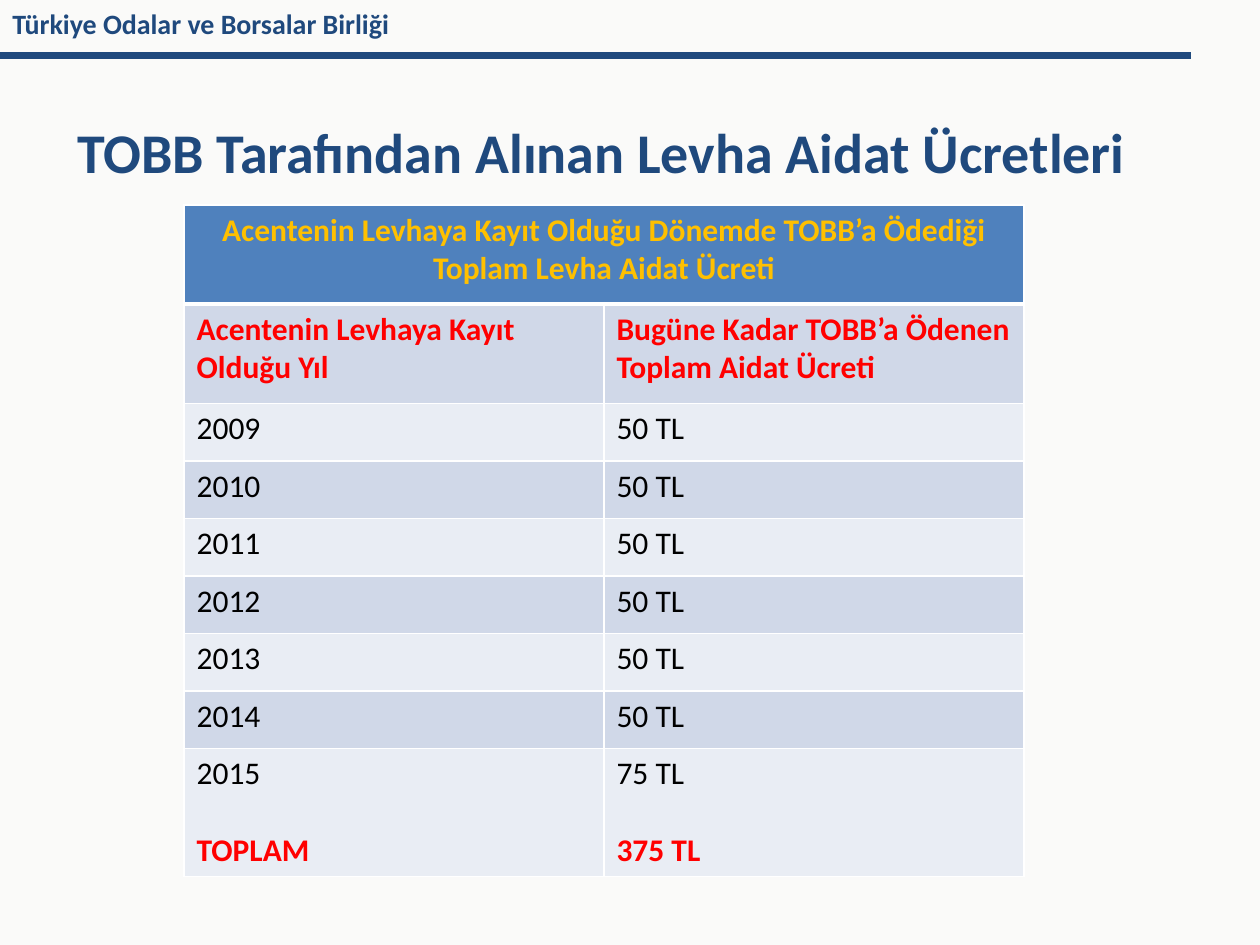
from dataclasses import dataclass

from lxml.etree import SubElement
from pptx import Presentation
from pptx.dml.color import RGBColor as RGB
from pptx.enum.shapes import MSO_CONNECTOR as Connector
from pptx.enum.text import MSO_ANCHOR as Anchor, MSO_AUTO_SIZE as AutoSize, PP_ALIGN as Align
from pptx.oxml import parse_xml
from pptx.oxml.ns import nsdecls, qn
from pptx.util import Cm, Pt


@dataclass(frozen=True)
class Theme:
    """Colours, font and type sizes of the slide."""
    font: str = "Calibri"
    paper: RGB = RGB(0xFA, 0xFA, 0xF9)
    navy: RGB = RGB(0x1F, 0x49, 0x7D)
    heading_fill: RGB = RGB(0x4F, 0x81, 0xBD)
    bands: tuple = (RGB(0xD0, 0xD8, 0xE8), RGB(0xE9, 0xED, 0xF4))
    gold: RGB = RGB(0xFF, 0xC0, 0x00)
    red: RGB = RGB(0xFF, 0x00, 0x00)
    black: RGB = RGB(0x00, 0x00, 0x00)
    title_size: Pt = Pt(32)
    banner_size: Pt = Pt(16)
    table_size: Pt = Pt(18)
    total_gap: Pt = Pt(22)


THEME = Theme()
HEADING = "Acentenin Levhaya Kayıt Olduğu Dönemde TOBB’a Ödediği Toplam Levha Aidat Ücreti"
COLUMNS = ("Acentenin Levhaya Kayıt Olduğu Yıl", "Bugüne Kadar TOBB’a Ödenen Toplam Aidat Ücreti")
FEES = {2009: 50, 2010: 50, 2011: 50, 2012: 50, 2013: 50, 2014: 50, 2015: 75}


def style(paragraph, size, color, bold=True):
    """Format every run of a paragraph."""
    for run in paragraph.runs:
        run.font.name = THEME.font
        run.font.size = size
        run.font.bold = bold
        run.font.color.rgb = color


def add_banner(slide):
    """Add the organisation name and the rule below it."""
    rule = slide.shapes.add_connector(Connector.STRAIGHT, 0, Cm(1.12), Cm(24), Cm(1.12))
    rule.line.color.rgb = THEME.navy
    rule.line.width = Pt(4)
    SubElement(rule._element.spPr, qn("a:effectLst"))
    frame = slide.shapes.add_textbox(0, 0, Cm(20.7), Cm(0.94)).text_frame
    frame.word_wrap = True
    frame.text = "Türkiye Odalar ve Borsalar Birliği"
    style(frame.paragraphs[0], THEME.banner_size, THEME.navy)


def set_title(slide, wording):
    """Place and format the title placeholder."""
    title = slide.shapes.title
    title.left, title.top, title.width, title.height = Cm(1.3), Cm(1.73), Cm(22.86), Cm(2.62)
    frame = title.text_frame
    frame.text = wording
    frame.auto_size = AutoSize.NONE
    frame.vertical_anchor = Anchor.MIDDLE
    frame.paragraphs[0].alignment = Align.LEFT
    style(frame.paragraphs[0], THEME.title_size, THEME.navy)


def set_borders(cell, top=1, bottom=1):
    """Draw white lines around a cell, with widths in points."""
    properties = cell._tc.get_or_add_tcPr()
    for place, (side, width) in enumerate(zip("LRTB", (1, 1, top, bottom))):
        properties.insert(place, parse_xml(
            f'<a:ln{side} {nsdecls("a")} w="{Pt(width)}"><a:solidFill>'
            f'<a:srgbClr val="FFFFFF"/></a:solidFill></a:ln{side}>'))


def fill_cell(cell, wording, fill, color, bold, top=1, bottom=1):
    """Write a cell and give it its fill and borders."""
    cell.text = wording
    style(cell.text_frame.paragraphs[0], THEME.table_size, color, bold)
    cell.fill.solid()
    cell.fill.fore_color.rgb = fill
    set_borders(cell, top, bottom)


def add_total(cell, wording):
    """Add the total below the last entry of a column."""
    total = cell.text_frame.add_paragraph()
    total.text = wording
    total.space_before = THEME.total_gap
    style(total, THEME.table_size, THEME.red)


def add_fee_table(slide):
    """Add the table of yearly fees with its heading and total."""
    heights = [Cm(2)] * 2 + [Cm(1.16)] * (len(FEES) - 1) + [Cm(2.58)]
    table = slide.shapes.add_table(len(heights), len(COLUMNS), Cm(3.71), Cm(4.13),
                                   Cm(16.93), sum(heights)).table
    for row, height in zip(table.rows, heights):
        row.height = height

    heading, spanned = table.cell(0, 0), table.cell(0, 1)
    heading.merge(spanned)
    fill_cell(heading, HEADING, THEME.heading_fill, THEME.gold, True, bottom=3)
    heading.text_frame.paragraphs[0].alignment = Align.CENTER
    set_borders(spanned, bottom=3)

    for column, label in enumerate(COLUMNS):
        fill_cell(table.cell(1, column), label, THEME.bands[0], THEME.red, True, top=3)
    for row, (year, fee) in enumerate(FEES.items(), start=2):
        for column, entry in enumerate((str(year), f"{fee} TL")):
            fill_cell(table.cell(row, column), entry, THEME.bands[(row - 1) % 2], THEME.black, False)

    last = len(heights) - 1
    for column, total in enumerate(("TOPLAM", f"{sum(FEES.values())} TL")):
        add_total(table.cell(last, column), total)


def main():
    """Build and save the slide."""
    deck = Presentation()
    deck.slide_width, deck.slide_height = Cm(25.4), Cm(19.05)
    slide = deck.slides.add_slide(deck.slide_layouts.get_by_name("Title Only"))
    slide.background.fill.solid()
    slide.background.fill.fore_color.rgb = THEME.paper
    add_banner(slide)
    set_title(slide, "TOBB Tarafından Alınan Levha Aidat Ücretleri")
    add_fee_table(slide)
    deck.save("out.pptx")


if __name__ == "__main__":
    main()
